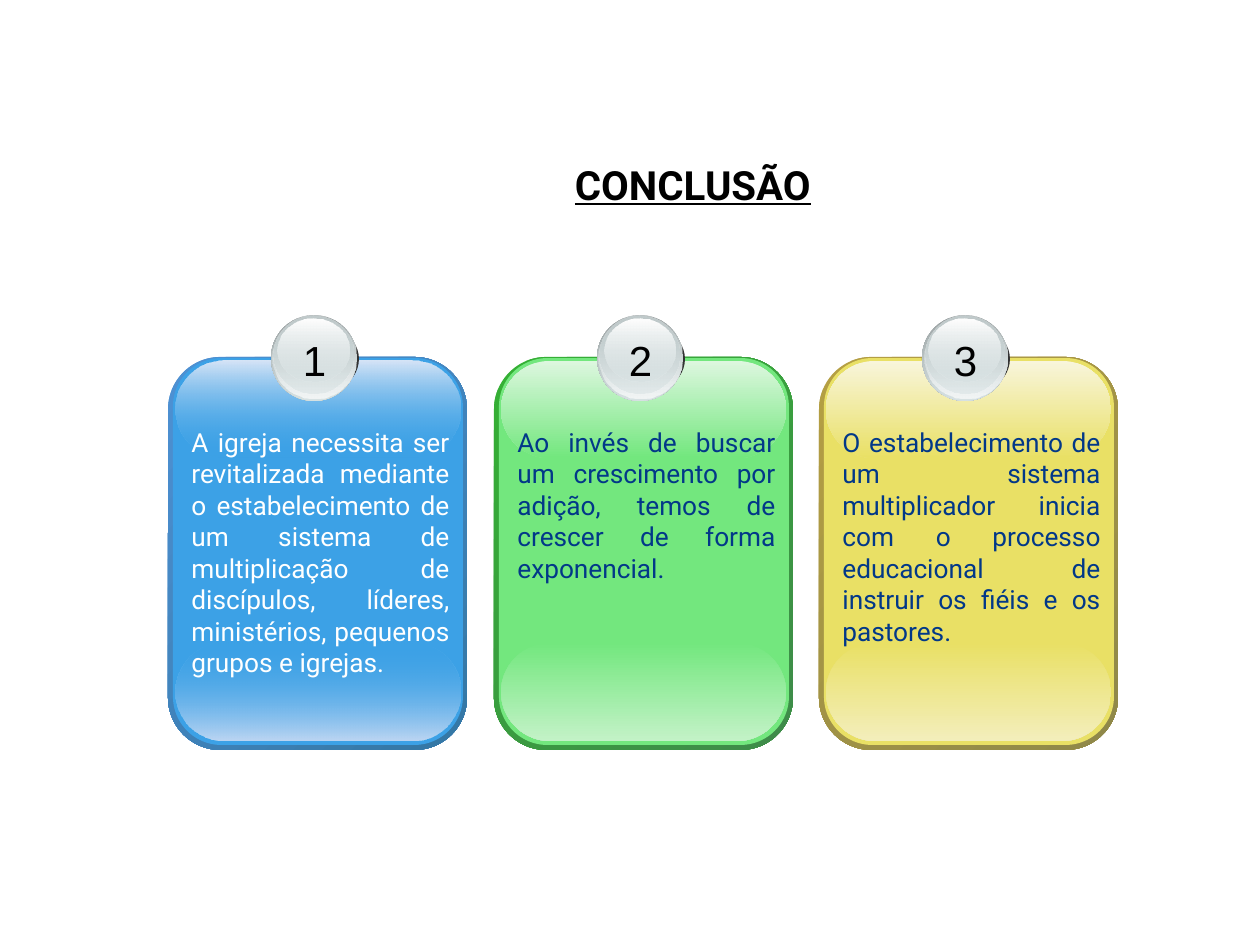
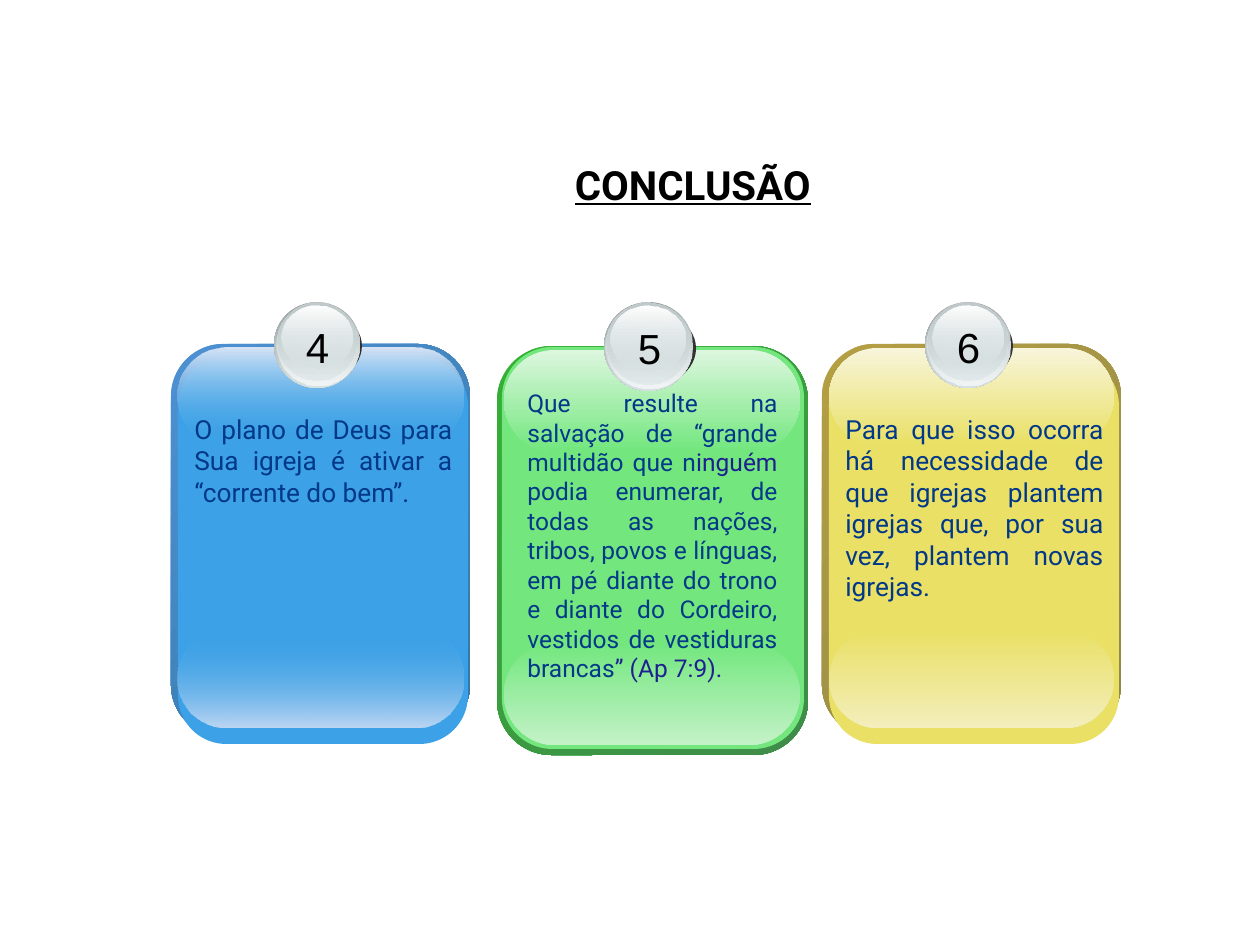
from pptx import Presentation
from pptx.dml.color import RGBColor
from pptx.enum.shapes import MSO_SHAPE as SHAPE
from pptx.enum.text import MSO_ANCHOR as ANCHOR, MSO_AUTO_SIZE as AUTO_SIZE, PP_ALIGN as ALIGN
from pptx.oxml.ns import qn
from pptx.util import Pt
from lxml.etree import SubElement

# Shared measures and colours
EMU_PER_PX = 914400 / 126
BLACK, WHITE, NAVY, VIOLET = "000000", "FFFFFF", "023888", "1D208F"

# Per palette: frame gradient, face, upper gloss, lower gloss, opacity of the gloss inner end
PALETTES = {
    "blue": ("4E91D4", "3477A4", "3CA1E6", "D7E5F7", "BDD6F3", 0),
    "green": ("34B034", "3F8B4A", "73E77E", "DDF7DF", "C3F2C7", 100),
    "yellow": ("B59F43", "8F8849", "E9E065", "F8F5DB", "F3EEBB", 100),
}

# Badge layers, back to front: place within the card, then gradient stops (colour, opacity)
BADGE_LAYERS = [
    ((103, -34, 88, 72), [("333333", 100)]),
    ((103, -42, 86, 86), [("99A1A2", 100), ("D6E1E2", 100)]),
    ((105, -41, 83, 83), [("D6E1E2", 0), ("F2F5F5", 100)]),
    ((106, -41, 79, 78), [("C1CBCC", 100), ("D6E1E2", 48)]),
    ((110, -38, 71, 63), [("FFFFFF", 100), ("D6E1E2", 38)]),
]


def px(length):
    return round(length * EMU_PER_PX)


def color(hex_code):
    return RGBColor.from_string(hex_code)


def paint(shape, stops, angle):
    """Fill with one colour, or a two-stop gradient turned clockwise by angle."""
    if len(stops) == 1:
        shape.fill.solid()
        shape.fill.fore_color.rgb = color(stops[0][0])
        return
    shape.fill.gradient()
    shape.fill.gradient_angle = 360 - angle
    for stop, (hex_code, _) in zip(shape.fill.gradient_stops, stops):
        stop.color.rgb = color(hex_code)
    for node, (_, opacity) in zip(shape.element.iter(qn("a:srgbClr")), stops):
        if opacity < 100:
            SubElement(node, qn("a:alpha")).set("val", str(opacity * 1000))


def add_layer(shapes, kind, place, stops, angle=90, corner=None):
    shape = shapes.add_shape(kind, *map(px, place))
    shape.shadow.inherit = False
    shape.line.fill.background()
    paint(shape, stops, angle)
    if corner is not None:
        shape.adjustments[0] = corner


def add_text(shapes, place, runs, size, font="Roboto", align=ALIGN.CENTER,
             wrap=True, grow=True, heading=False):
    box = shapes.add_textbox(*map(px, place))
    frame = box.text_frame
    frame.word_wrap = wrap
    frame.auto_size = AUTO_SIZE.SHAPE_TO_FIT_TEXT if grow else AUTO_SIZE.NONE
    if heading:
        frame.vertical_anchor = ANCHOR.MIDDLE
    para = frame.paragraphs[0]
    para.alignment = align
    for text, hex_code in runs:
        span = para.add_run()
        span.text = text
        span.font.name = font
        span.font.size = Pt(size)
        span.font.color.rgb = color(hex_code)
        if heading:
            span.font.bold = span.font.underline = True


def add_title(page):
    add_text(page.shapes, (210, 105, 966, 158), [("CONCLUSÃO", BLACK)], 23,
             grow=False, heading=True)


def add_card(page, palette, left, top, number, runs, scale=1.0,
             face_at=(5, 1), text_at=(11, 63, 283, 267), size=15):
    """Glossy card with a numbered badge; scale enlarges everything but the text."""
    shapes = page.shapes.add_group_shape().shapes
    start, end, face, upper, lower, opacity = PALETTES[palette]

    def inside(x, y, width, height, factor=scale):
        return (left + round(x * factor), top + round(y * factor),
                round(width * factor), round(height * factor))

    # Card body
    for place, stops, angle, corner in [
        ((0, 0, 299, 393), [(start, 100), (end, 100)], 45, 0.175),
        ((*face_at, 290, 387), [(face, 100)], 90, 0.167),
        ((7, 286, 285, 98), [(face, opacity), (lower, 100)], 90, 0.5),
        ((7, 4, 285, 97), [(upper, 100), (face, opacity)], 90, 0.5),
    ]:
        add_layer(shapes, SHAPE.ROUNDED_RECTANGLE, inside(*place), stops, angle, corner)

    # Badge
    for place, stops in BADGE_LAYERS:
        add_layer(shapes, SHAPE.OVAL, inside(*place), stops)
    add_text(shapes, inside(122, -29, 49, 63), [(number, BLACK)], 24, "Arial", wrap=False)

    # Statement
    add_text(shapes, inside(*text_at, factor=1), runs, size, align=ALIGN.JUSTIFY)


def main():
    deck = Presentation()
    deck.slide_width, deck.slide_height = px(1260), px(945)
    blank = deck.slide_layouts[6]

    # Points 1 to 3
    page = deck.slides.add_slide(blank)
    add_title(page)
    points = [
        ("blue", WHITE, "A igreja necessita ser revitalizada mediante o estabelecimento de um "
         "sistema de multiplicação de discípulos, líderes, ministérios, pequenos grupos e igrejas."),
        ("green", NAVY, "Ao invés de buscar um crescimento por adição, temos de crescer de "
         "forma exponencial."),
        ("yellow", NAVY, "O estabelecimento de um sistema multiplicador inicia com o processo "
         "educacional de instruir os fiéis e os pastores."),
    ]
    for index, (palette, ink, text) in enumerate(points):
        add_card(page, palette, 168 + round(325.5 * index), 357, str(index + 1), [(text, ink)])

    # Points 4 to 6
    page = deck.slides.add_slide(blank)
    add_title(page)
    low_face = (7, 13)
    add_card(page, "blue", 171, 344, "4",
             [("O plano de Deus para Sua igreja é ativar a “corrente do bem”.", NAVY)],
             face_at=low_face)
    add_card(page, "yellow", 822, 344, "6",
             [("Para que isso ocorra há necessidade de que igrejas plantem igrejas que, "
               "por sua vez, plantem novas igrejas.", NAVY)], face_at=low_face)
    add_card(page, "green", 497, 346, "5", [
        ("Que resulte na salvação de “grande multidão que n", NAVY),
        ("inguém", VIOLET),
        (" podia enumerar, de todas as nações, tribos, povos e línguas, em pé diante do trono "
         "e diante do Cordeiro, vestidos de vestiduras brancas", NAVY),
        ("” (Ap 7:9).", VIOLET),
    ], scale=1.04, text_at=(18, 36, 275, 386), size=14)

    deck.save("out.pptx")


if __name__ == "__main__":
    main()
